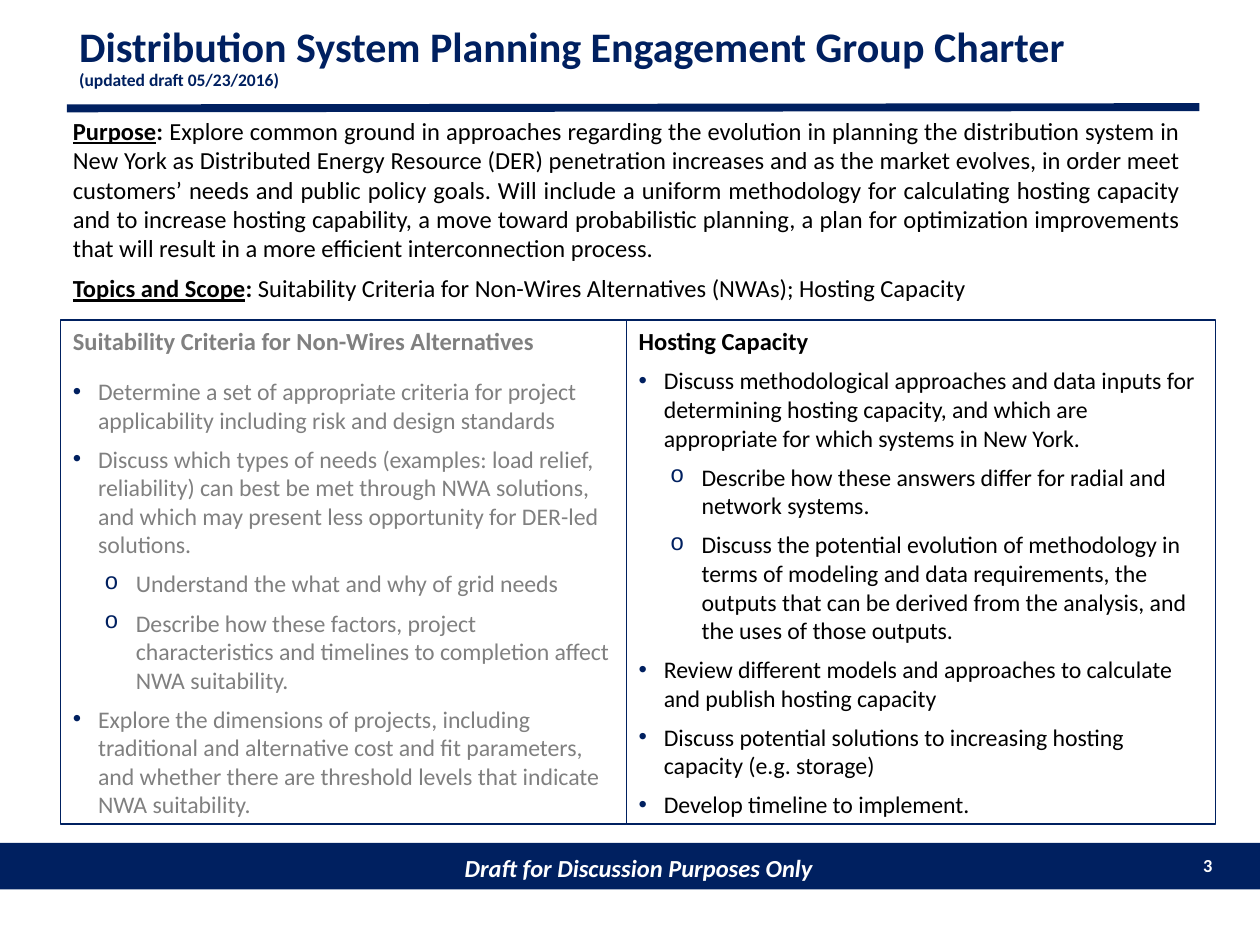
from dataclasses import dataclass, field

from lxml import etree
from pptx import Presentation
from pptx.dml.color import RGBColor
from pptx.enum.shapes import MSO_CONNECTOR, MSO_SHAPE
from pptx.enum.text import MSO_ANCHOR, PP_ALIGN
from pptx.oxml.ns import qn
from pptx.util import Inches, Pt

RECTANGLE = MSO_SHAPE.RECTANGLE
STRAIGHT = MSO_CONNECTOR.STRAIGHT
TOP, MIDDLE = MSO_ANCHOR.TOP, MSO_ANCHOR.MIDDLE
LEFT, CENTER = PP_ALIGN.LEFT, PP_ALIGN.CENTER
RIGHT, JUSTIFY = PP_ALIGN.RIGHT, PP_ALIGN.JUSTIFY

NAVY, WHITE, BLACK, GREY = "002060", "FFFFFF", "000000", "808080"
FONT = "Calibri"
PANEL_TOP, PANEL_HEIGHT = 2.54, 4


@dataclass(frozen=True)
class BulletStyle:
    mark: str
    typeface: str
    indent: float
    hanging: float


LEVELS = (
    BulletStyle("•", "Arial", 0.2, 0.2),
    BulletStyle("o", "Courier New", 0.5, 0.25),
)


@dataclass(frozen=True)
class Topic:
    wording: str
    level: int = 0


@dataclass(frozen=True)
class Panel:
    left: float
    width: float
    heading: str
    color: str
    topics: tuple[Topic, ...]
    heading_format: dict = field(default_factory=dict)


@dataclass(frozen=True)
class Section:
    label: str
    wording: str
    paragraph_format: dict = field(default_factory=dict)


PANELS = (
    Panel(0.48, 4.49, "Suitability Criteria for Non-Wires Alternatives", GREY, (
        Topic("Determine a set of appropriate criteria for project applicability "
              "including risk and design standards"),
        Topic("Discuss which types of needs (examples: load relief, reliability) can best "
              "be met through NWA solutions, and which may present less opportunity for "
              "DER-led solutions."),
        Topic("Understand the what and why of grid needs", 1),
        Topic("Describe how these factors, project characteristics and timelines to "
              "completion affect NWA suitability.", 1),
        Topic("Explore the dimensions of projects, including traditional and alternative "
              "cost and fit parameters, and whether there are threshold levels that "
              "indicate NWA suitability."),
    ), {"space_after": Pt(6)}),
    Panel(4.97, 4.68, "Hosting Capacity", BLACK, (
        Topic("Discuss methodological approaches and data inputs for determining hosting "
              "capacity, and which are appropriate for which systems in New York."),
        Topic("Describe how these answers differ for radial and network systems.", 1),
        Topic("Discuss the potential evolution of methodology in terms of modeling and "
              "data requirements, the outputs that can be derived from the analysis, and "
              "the uses of those outputs.", 1),
        Topic("Review different models and approaches to calculate and publish hosting "
              "capacity"),
        Topic("Discuss potential solutions to increasing hosting capacity (e.g. storage)"),
        Topic("Develop timeline to implement."),
    )),
)

SECTIONS = (
    Section("Purpose",
            "Explore common ground in approaches regarding the evolution in planning the "
            "distribution system in New York as Distributed Energy Resource (DER) "
            "penetration increases and as the market evolves, in order meet customers’ "
            "needs and public policy goals. Will include a uniform methodology for "
            "calculating hosting capacity and to increase hosting capability, a move "
            "toward probabilistic planning, a plan for optimization improvements that "
            "will result in a more efficient interconnection process.",
            {"space_after": Pt(6)}),
    Section("Topics and Scope",
            "Suitability Criteria for Non-Wires Alternatives (NWAs); Hosting Capacity"),
)


def rgb(value: str) -> RGBColor:
    return RGBColor.from_string(value)


def apply(target, formats: dict) -> None:
    for name, value in formats.items():
        setattr(target, name, value)


def add_run(paragraph, wording: str, size: float, color: str, **formats) -> None:
    run = paragraph.add_run()
    run.text = wording
    apply(run.font, {"name": FONT, "size": Pt(size), **formats})
    run.font.color.rgb = rgb(color)


def add_text_box(slide, left: float, top: float, width: float, height: float,
                 anchor=TOP):
    frame = slide.shapes.add_textbox(
        Inches(left), Inches(top), Inches(width), Inches(height)).text_frame
    apply(frame, {"word_wrap": True, "vertical_anchor": anchor})
    return frame


def add_rectangle(slide, left: float, top: float, width: float, height: float):
    rectangle = slide.shapes.add_shape(
        RECTANGLE, Inches(left), Inches(top), Inches(width), Inches(height))
    rectangle.shadow.inherit = False
    apply(rectangle.text_frame, {"word_wrap": True, "vertical_anchor": TOP})
    return rectangle


def add_bullet(paragraph, style: BulletStyle) -> None:
    properties = paragraph._p.get_or_add_pPr()
    properties.set("marL", str(Inches(style.indent)))
    properties.set("indent", str(-Inches(style.hanging)))
    color = etree.SubElement(properties, qn("a:buClr"))
    etree.SubElement(color, qn("a:srgbClr"), val=NAVY)
    etree.SubElement(properties, qn("a:buFont"), typeface=style.typeface)
    etree.SubElement(properties, qn("a:buChar"), char=style.mark)


def add_footer(slide) -> None:
    band = add_rectangle(slide, 0, 6.69, 10, 0.37)
    band.fill.solid()
    band.fill.fore_color.rgb = rgb(NAVY)
    band.line.fill.background()
    apply(band.text_frame, {"margin_left": Inches(0.24), "margin_top": Inches(0.08)})
    notice = band.text_frame.paragraphs[0]
    notice.alignment = CENTER
    add_run(notice, "Draft for Discussion Purposes Only", 14, WHITE,
            bold=True, italic=True)
    page_number = add_text_box(slide, 9.31, 6.73, 0.41, 0.29).paragraphs[0]
    page_number.alignment = RIGHT
    add_run(page_number, "3", 10.5, WHITE, bold=True)


def add_title(slide) -> None:
    rule = slide.shapes.add_connector(
        STRAIGHT, Inches(0.53), Inches(0.86), Inches(9.52), Inches(0.85))
    rule.line.color.rgb = rgb(NAVY)
    rule.line.width = Pt(4.5)
    etree.SubElement(rule._element.spPr, qn("a:effectLst"))
    title = add_text_box(slide, 0.53, 0.13, 8.99, 0.67, MIDDLE).paragraphs[0]
    title.line_spacing = 0.9
    add_run(title, "Distribution System Planning Engagement Group Charter", 24, NAVY,
            bold=True)
    title.add_line_break()
    add_run(title, "(updated draft 05/23/2016)", 10, NAVY, bold=True)


def add_panel(slide, panel: Panel) -> None:
    box = add_rectangle(slide, panel.left, PANEL_TOP, panel.width, PANEL_HEIGHT)
    box.fill.background()
    box.line.color.rgb = rgb(NAVY)
    box.line.width = Pt(0.75)
    heading = box.text_frame.paragraphs[0]
    apply(heading, {"alignment": JUSTIFY, **panel.heading_format})
    add_run(heading, panel.heading, 14, panel.color, bold=True)
    for topic in panel.topics:
        paragraph = box.text_frame.add_paragraph()
        apply(paragraph, {"alignment": LEFT, "level": topic.level, "space_before": Pt(6)})
        add_bullet(paragraph, LEVELS[topic.level])
        add_run(paragraph, topic.wording, 13.6, panel.color, bold=False)


def add_sections(slide) -> None:
    frame = add_text_box(slide, 0.48, 0.87, 8.99, 1.6)
    for index, section in enumerate(SECTIONS):
        paragraph = frame.add_paragraph() if index else frame.paragraphs[0]
        apply(paragraph, {"alignment": JUSTIFY, **section.paragraph_format})
        add_run(paragraph, section.label, 14, BLACK, bold=True, underline=True)
        add_run(paragraph, ": ", 14, BLACK, bold=True)
        add_run(paragraph, section.wording, 14, BLACK)


def main() -> None:
    deck = Presentation()
    apply(deck, {"slide_width": Inches(10), "slide_height": Inches(7.5)})
    slide = deck.slides.add_slide(deck.slide_layouts[6])
    add_footer(slide)
    add_title(slide)
    for panel in PANELS:
        add_panel(slide, panel)
    add_sections(slide)
    deck.save("out.pptx")


if __name__ == "__main__":
    main()
